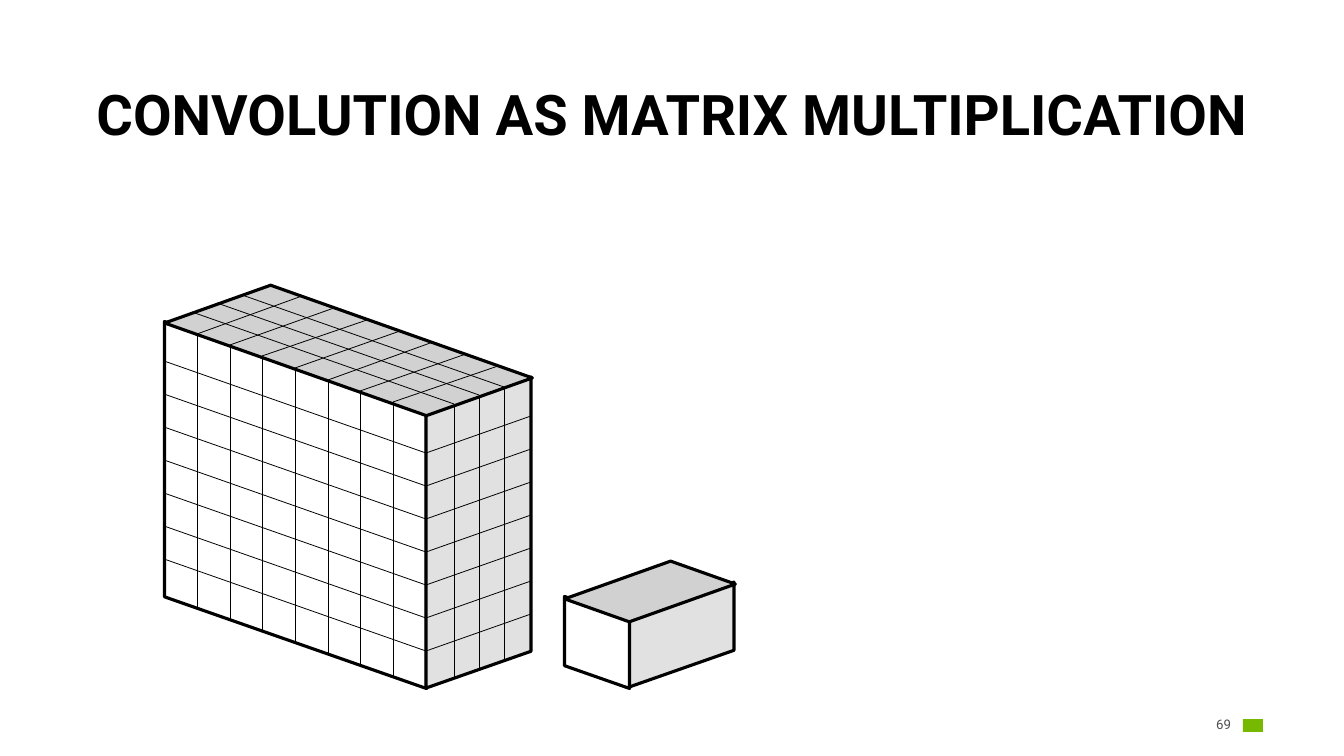
import pptx
import pptx.dml.color
import pptx.enum.shapes
import pptx.enum.text
import pptx.oxml
import pptx.oxml.ns
import pptx.util

PX = 914400 // 112
COLORS = {
    "ink": "000000",
    "front": "FFFFFF",
    "side": "E1E1E1",
    "top": "D1D1D1",
    "number": "505050",
    "accent": "76B900",
}
COLORS = {name: pptx.dml.color.RGBColor.from_string(value) for name, value in COLORS.items()}
SHAPES = pptx.enum.shapes.MSO_SHAPE
ALIGN = pptx.enum.text.PP_ALIGN
ANCHOR = pptx.enum.text.MSO_ANCHOR

deck = pptx.Presentation()
deck.slide_width = 1344 * PX
deck.slide_height = 756 * PX
slide = deck.slides.add_slide(deck.slide_layouts[6])


def add_text(text, bounds, size, color, align, anchor, bold=False):
    box = slide.shapes.add_textbox(*[length * PX for length in bounds])
    frame = box.text_frame
    frame.word_wrap = True
    frame.vertical_anchor = anchor
    frame.margin_left = frame.margin_right = frame.margin_top = frame.margin_bottom = 0
    para = frame.paragraphs[0]
    para.text = text
    para.alignment = align
    para.line_spacing = 0.9
    para.font.name = "Roboto"
    para.font.size = pptx.util.Pt(size)
    para.font.bold = bold
    para.font.color.rgb = COLORS[color]


def add_grid_line(x, y, direction):
    dx, dy = direction
    ends = [round(value) * PX for value in (x, y, x + dx, y + dy)]
    line = slide.shapes.add_connector(pptx.enum.shapes.MSO_CONNECTOR.STRAIGHT, *ends)
    line.line.color.rgb = COLORS["ink"]
    line.line.width = pptx.util.Pt(0.5)
    line.element.spPr.append(pptx.oxml.parse_xml(f"<a:effectLst {pptx.oxml.ns.nsdecls('a')}/>"))


# Page number and a plain mark in the footer
add_text("69", (1196, 715, 35, 20), 8.5, "number", ALIGN.RIGHT, ANCHOR.MIDDLE)
mark = slide.shapes.add_shape(SHAPES.RECTANGLE, 1243 * PX, 719 * PX, 20 * PX, 13 * PX)
mark.shadow.inherit = False
mark.fill.solid()
mark.fill.fore_color.rgb = COLORS["accent"]
mark.line.fill.background()

add_text("CONVOLUTION AS MATRIX MULTIPLICATION", (61, 81, 1222, 67), 36, "ink",
         ALIGN.CENTER, ANCHOR.BOTTOM, bold=True)

# Each face: colour, unrotated bounds, rotation, slant
input_faces = [
    ("front", (112, 374, 367, 262), 90, 0.35),
    ("side", (323, 480, 311, 105), 90, 0.35),
    ("top", (166, 315, 365, 71), 19.5, 1.23),
]
kernel_faces = [
    ("side", (629, 582, 105, 105), 90, 0.35),
    ("front", (551, 610, 92, 65), 90, 0.35),
    ("top", (572, 556, 156, 71), 19.5, 1.23),
]

# Edges of the input block, from the upper left and upper right front corners
left, top = 164, 322
across, depth, down = (262, 92), (105, -37), (0, 275)
right, right_top = left + across[0], top + across[1]

for faces in (input_faces, kernel_faces):
    for name, bounds, rotation, slant in faces:
        face = slide.shapes.add_shape(SHAPES.PARALLELOGRAM, *[length * PX for length in bounds])
        face.adjustments[0] = slant
        face.rotation = rotation
        if name == "side":
            face.element.spPr.find(pptx.oxml.ns.qn("a:xfrm")).set("flipV", "1")
        face.shadow.inherit = False
        face.fill.solid()
        face.fill.fore_color.rgb = COLORS[name]
        face.line.color.rgb = COLORS["ink"]
        face.line.width = pptx.util.Pt(2)

    if faces is input_faces:
        for column in range(1, 8):
            x, y = left + across[0] * column / 8, top + across[1] * column / 8
            add_grid_line(x, y, down)
            add_grid_line(x, y, depth)
        for offset in range(28, 80, 25):
            rise = offset * depth[1] / depth[0]
            add_grid_line(right + offset, right_top + rise, down)
            add_grid_line(left + offset, top + rise, across)
        for offset in range(39, 240, 33):
            add_grid_line(left, top + offset, across)
            add_grid_line(right, right_top + offset, depth)

deck.save("out.pptx")
